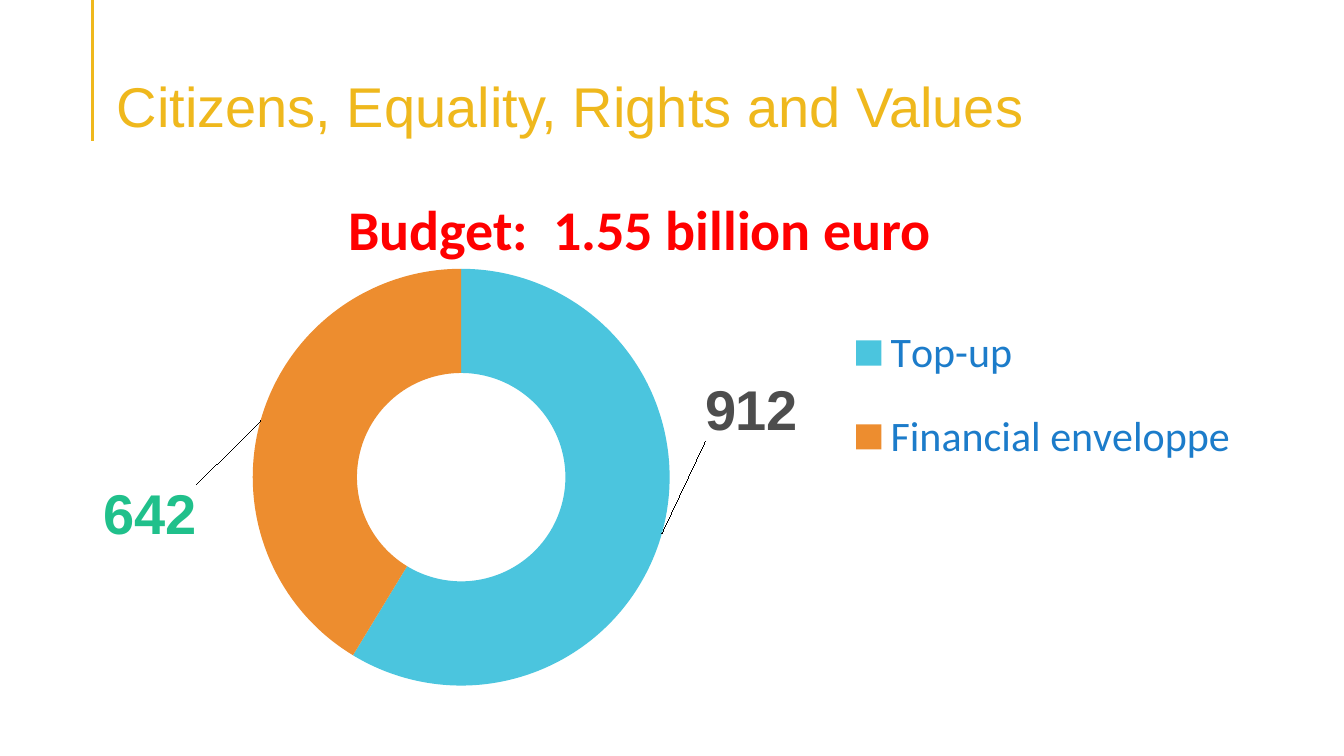
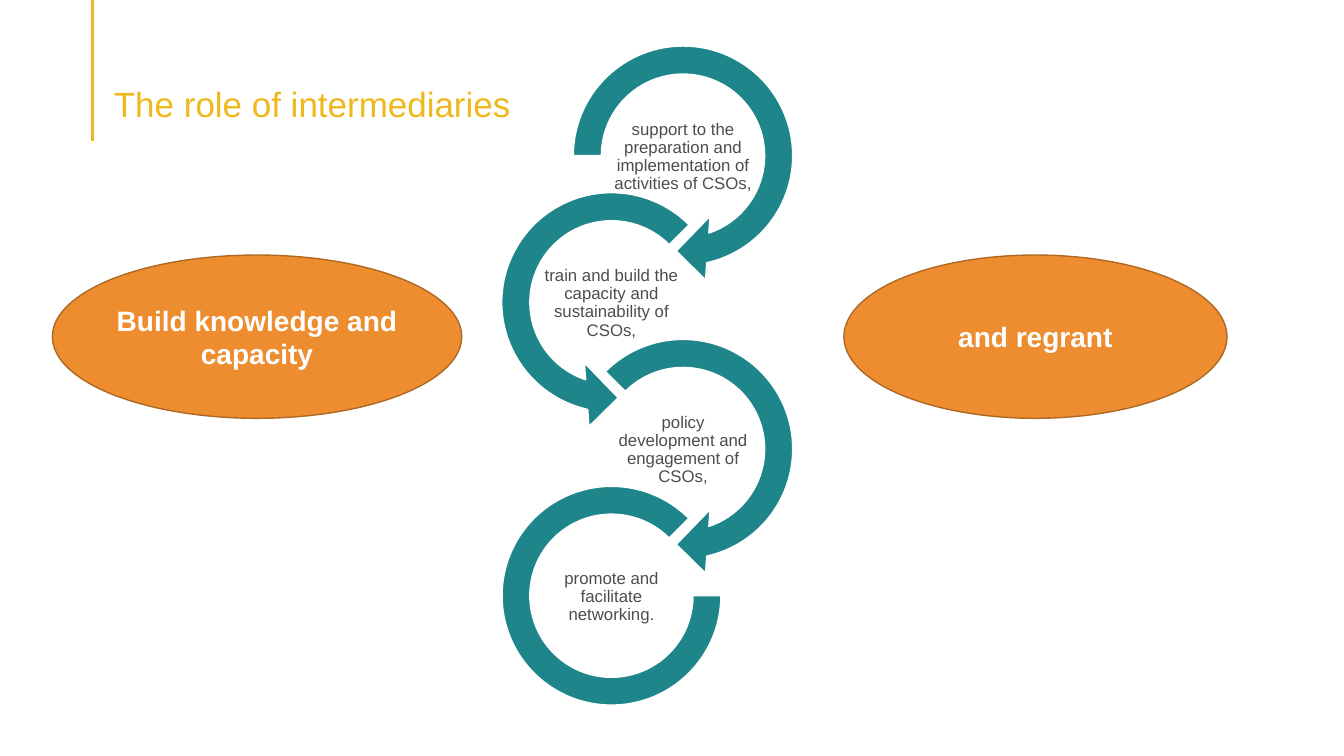
from lxml import etree
from pptx import Presentation
from pptx.chart.data import CategoryChartData
from pptx.dml.color import RGBColor
from pptx.enum import chart as ch, shapes, text as tx
from pptx.oxml import parse_xml
from pptx.oxml.ns import nsdecls, qn
from pptx.util import Inches, Pt

GOLD = RGBColor(0xEF, 0xB8, 0x1D)
ORANGE = RGBColor(0xED, 0x8D, 0x2F)
BROWN = RGBColor(0xAF, 0x68, 0x23)
SKY = RGBColor(0x4B, 0xC5, 0xDE)
TEAL = RGBColor(0x1E, 0x85, 0x8B)
GREEN = RGBColor(0x20, 0xC0, 0x8B)
BLUE = RGBColor(0x1C, 0x7C, 0xCA)
RED = RGBColor(0xFF, 0x00, 0x00)
GREY = RGBColor(0x4D, 0x4D, 0x4D)
WHITE = RGBColor(0xFF, 0xFF, 0xFF)

CENTER, LEFT = tx.PP_ALIGN.CENTER, tx.PP_ALIGN.LEFT
MIDDLE, BOTTOM, TOP = (tx.MSO_ANCHOR.MIDDLE, tx.MSO_ANCHOR.BOTTOM,
                       tx.MSO_ANCHOR.TOP)
TITLE_ONLY = 5


def inches(*lengths):
    return [Inches(length) for length in lengths]


def style_font(font, size, color, name="Arial", bold=False):
    font.size, font.name, font.bold = Pt(size), name, bold
    font.color.rgb = color


def write_text(frame, text, size, color, name="Arial", bold=False, align=CENTER,
               anchor=MIDDLE, insets=(0.1, 0.05, 0.1, 0.05), spacing=None):
    frame.word_wrap = True
    frame.auto_size = tx.MSO_AUTO_SIZE.NONE
    frame.vertical_anchor = anchor
    (frame.margin_left, frame.margin_top,
     frame.margin_right, frame.margin_bottom) = inches(*insets)
    paragraph = frame.paragraphs[0]
    paragraph.alignment = align
    paragraph.line_spacing = spacing
    run = paragraph.add_run()
    run.text = text
    style_font(run.font, size, color, name, bold)


def add_filled(parent, preset, box, fill, line):
    shape = parent.add_shape(preset, *inches(*box))
    shape.shadow.inherit = False
    shape.fill.solid()
    shape.fill.fore_color.rgb = fill
    shape.line.color.rgb = line
    shape.line.width = Pt(1)
    return shape


def add_titled_slide(deck, title, left, top, size):
    """Add a slide with the gold rule and a title at the given place."""
    slide = deck.slides.add_slide(deck.slide_layouts[TITLE_ONLY])
    rule = slide.shapes.add_connector(shapes.MSO_CONNECTOR.STRAIGHT,
                                      *inches(0.92, 0, 0.92, 1.4))
    rule.line.color.rgb = GOLD
    rule.line.width = Pt(2.25)
    etree.SubElement(rule.element.spPr, qn("a:effectLst"))
    holder = slide.shapes.title
    holder.left, holder.top, holder.width, holder.height = inches(
        left, top, 11.5, 0.86)
    write_text(holder.text_frame, title, size, GOLD, align=LEFT, anchor=BOTTOM,
               insets=(0.1, 0.05, 0.1, 0), spacing=0.9)
    return slide


def manual_layout(**values):
    """Build a chart layout element from fractions and modes."""
    items = "".join(f'<c:{key} val="{value}"/>' for key, value in values.items())
    return parse_xml(f'<c:layout {nsdecls("c")}><c:manualLayout>{items}'
                     '</c:manualLayout></c:layout>')


def add_budget_doughnut(slide, box):
    budget = CategoryChartData()
    budget.categories = ["Top-up", "Financial enveloppe"]
    budget.add_series("Series 1", (912, 642))
    chart = slide.shapes.add_chart(ch.XL_CHART_TYPE.DOUGHNUT, *inches(*box),
                                   budget).chart
    chart.has_title = False
    style_font(chart.font, 18, GREY)

    chart.has_legend = True
    legend = chart.legend
    legend.position = ch.XL_LEGEND_POSITION.RIGHT
    legend.include_in_layout = False
    style_font(legend.font, 30, BLUE, "Calibri")
    for old in legend._element.findall(qn("c:layout")):
        legend._element.remove(old)
    legend._element.find(qn("c:legendPos")).addnext(manual_layout(
        xMode="edge", yMode="edge", x=0.64, y=0.09, w=0.33, h=0.45))

    plot_area = chart.element.find(".//" + qn("c:plotArea"))
    for old in plot_area.findall(qn("c:layout")):
        plot_area.remove(old)
    plot_area.insert(0, manual_layout(
        layoutTarget="inner", xMode="edge", yMode="edge",
        x=0.166, y=0.031, w=0.337, h=0.938))

    slices = chart.plots[0].series[0].points
    slice_styles = [(SKY, GREY), (ORANGE, GREEN)]
    for index, (fill, label_color) in enumerate(slice_styles):
        point = slices[index]
        point.format.fill.solid()
        point.format.fill.fore_color.rgb = fill
        point.format.line.fill.background()
        style_font(point.data_label.font, 40, label_color, bold=True)
    label_offsets = [(0.113, -0.244), (-0.13, 0.181)]
    labels = chart.element.findall(".//" + qn("c:dLbl"))
    for label, (dx, dy) in zip(labels, label_offsets):
        label.find(qn("c:idx")).addnext(manual_layout(x=dx, y=dy))


def add_step_chain(slide, left, top):
    """Stack four ring steps that swing between two columns."""
    size, shift, pitch = 2.53, 0.71, 1.455
    preset = shapes.MSO_SHAPE
    steps = [
        ("support to the preparation and implementation of activities of CSOs,",
         preset.CIRCULAR_ARROW, (0.11, 11.423, 45, 108, 0.125), 0),
        ("train and build the capacity and sustainability of CSOs,",
         preset.LEFT_CIRCULAR_ARROW, (0.11, 11.423, 63, 189, 0.125), 0),
        ("policy development and engagement of CSOs,",
         preset.CIRCULAR_ARROW, (0.11, 11.423, 45, 135, 0.125), 0),
        ("promote and facilitate networking.",
         preset.BLOCK_ARC, (0, 189, 0.127), 0.18),
    ]
    chain = slide.shapes.add_group_shape().shapes
    for index, (caption, outline, adjustments, inset) in enumerate(steps):
        x = left + (shift if index % 2 == 0 else 0)
        y = top + index * pitch
        diameter = size - 2 * inset
        ring = add_filled(chain, outline,
                          (x + inset, y + inset, diameter, diameter), TEAL, WHITE)
        for position, value in enumerate(adjustments):
            ring.adjustments[position] = value
        caption_box = chain.add_textbox(*inches(x + 0.56, y + 0.92, 1.41, 0.71))
        write_text(caption_box.text_frame, caption, 12, GREY,
                   insets=(0.01,) * 4, spacing=0.9)


def add_goal(slide, goal, box):
    oval = add_filled(slide.shapes, shapes.MSO_SHAPE.OVAL, box, ORANGE, BROWN)
    write_text(oval.text_frame, goal, 20, WHITE, bold=True,
               insets=(0, 0.04, 0, 0.04))


def build_budget_slide(deck):
    slide = add_titled_slide(deck, "Citizens, Equality, Rights and Values",
                             1.06, 0.53, 40)
    add_budget_doughnut(slide, (0.47, 2.53, 12.27, 4.41))
    budget_line = slide.shapes.add_textbox(*inches(1.43, 1.88, 9.83, 0.89))
    write_text(budget_line.text_frame, "Budget:  1.55 billion euro", 40, RED,
               name="Calibri", bold=True, anchor=TOP)


def build_intermediaries_slide(deck):
    slide = add_titled_slide(deck, "The role of intermediaries", 1.03, 0.38, 25)
    add_goal(slide, "Build knowledge and capacity", (0.52, 2.53, 4.06, 1.62))
    add_step_chain(slide, 4.8, 0.28)
    add_goal(slide, "and regrant", (8.37, 2.53, 3.8, 1.62))


def main():
    deck = Presentation()
    deck.slide_width, deck.slide_height = inches(13.33, 7.5)
    build_budget_slide(deck)
    build_intermediaries_slide(deck)
    deck.save("out.pptx")


if __name__ == "__main__":
    main()
